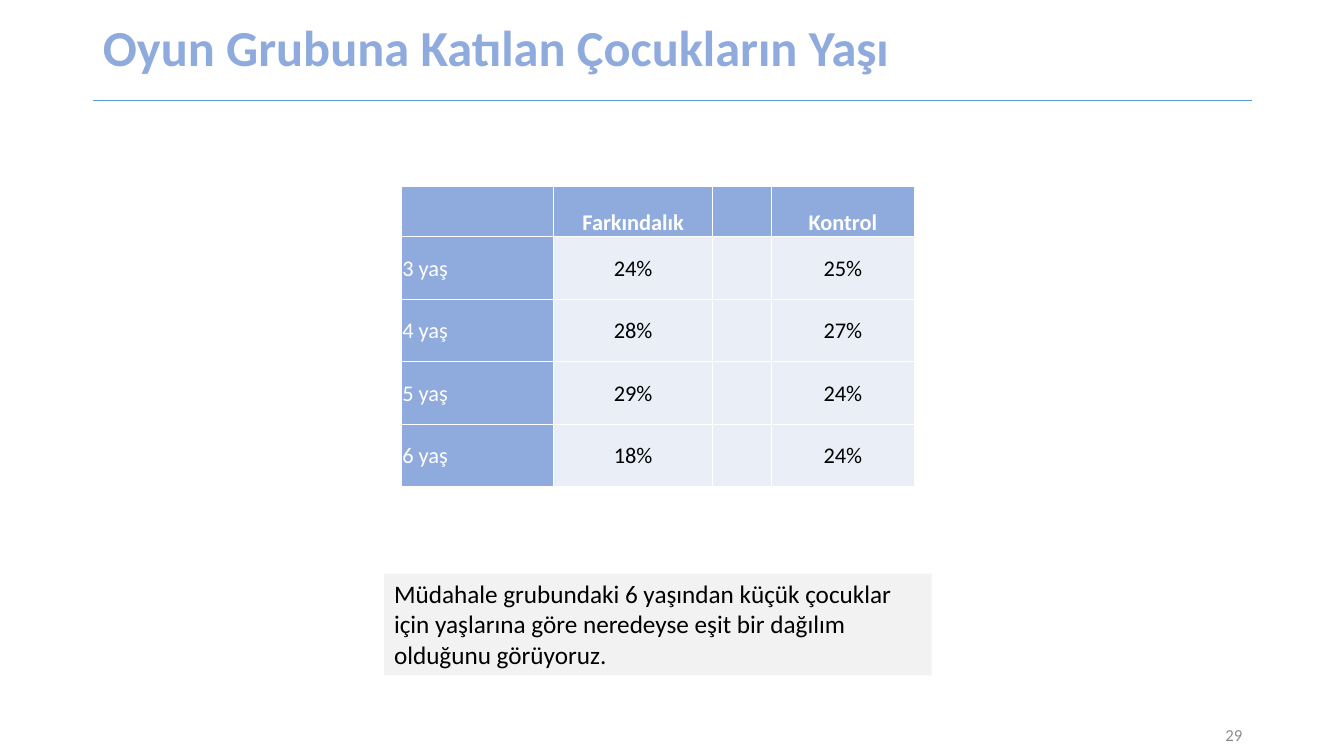
from lxml import etree
from pptx import Presentation
from pptx.dml.color import RGBColor
from pptx.enum.shapes import MSO_CONNECTOR, MSO_SHAPE
from pptx.enum.text import MSO_ANCHOR, MSO_AUTO_SIZE, PP_ALIGN
from pptx.oxml.ns import qn
from pptx.util import Inches, Pt

LEFT, CENTER, RIGHT = PP_ALIGN.LEFT, PP_ALIGN.CENTER, PP_ALIGN.RIGHT
TOP, MIDDLE, BOTTOM = MSO_ANCHOR.TOP, MSO_ANCHOR.MIDDLE, MSO_ANCHOR.BOTTOM
STRAIGHT, RECTANGLE = MSO_CONNECTOR.STRAIGHT, MSO_SHAPE.RECTANGLE
NO_FIT = MSO_AUTO_SIZE.NONE

FONT = "Calibri"
BLUE, PALE, RULE = "8FAADC", "EAEFF7", "5B9BD5"
WHITE, BLACK, GRAY, LIGHT_GRAY = "FFFFFF", "000000", "8C8C8C", "F2F2F2"

# Page grid, in inches
WIDTH, HEIGHT = 13.33, 7.5
MARGIN, CONTENT_WIDTH, TITLE_HEIGHT = 0.92, 11.5, 1
CONTENT_RIGHT = MARGIN + CONTENT_WIDTH

COLUMN_WIDTHS = [1.51, 1.58, 0.58, 1.42]
ROW_HEIGHTS = [0.5] + [0.62] * 4
AGE_ROWS = [
    ["", "Farkındalık", "", "Kontrol"],
    ["3 yaş", "24%", "", "25%"],
    ["4 yaş", "28%", "", "27%"],
    ["5 yaş", "29%", "", "24%"],
    ["6 yaş", "18%", "", "24%"],
]


def color(hex_value):
    return RGBColor.from_string(hex_value)


def inches(*lengths):
    return [Inches(length) for length in lengths]


def write(frame, text, size=16, ink=BLACK, bold=False, align=LEFT,
          anchor=MIDDLE, spacing=1.0):
    frame.word_wrap = True
    frame.vertical_anchor = anchor
    para = frame.paragraphs[0]
    para.alignment = align
    para.line_spacing = spacing
    span = para.add_run()
    span.text = text
    span.font.name = FONT
    span.font.size = Pt(size)
    span.font.bold = bold
    span.font.color.rgb = color(ink)


def add_title(page, text):
    title = page.shapes.title
    title.left, title.top, title.width, title.height = inches(
        MARGIN, 0, CONTENT_WIDTH, TITLE_HEIGHT)
    title.text_frame.auto_size = NO_FIT
    write(title.text_frame, text, size=36, ink=BLUE, bold=True, spacing=0.9)


def add_rule(page, top):
    rule = page.shapes.add_connector(
        STRAIGHT, *inches(MARGIN, top, CONTENT_RIGHT, top))
    rule.line.color.rgb = color(RULE)
    rule.line.width = Pt(0.5)
    etree.SubElement(rule._element.spPr, qn("a:effectLst"))


def add_borders(cell):
    properties = cell._tc.get_or_add_tcPr()
    for side in ("lnL", "lnR", "lnT", "lnB"):
        border = etree.SubElement(properties, qn(f"a:{side}"), w=str(Pt(1)))
        fill = etree.SubElement(border, qn("a:solidFill"))
        etree.SubElement(fill, qn("a:srgbClr"), val=WHITE)


def format_cell(cell, text, is_header, is_label):
    add_borders(cell)
    shaded = is_header or is_label
    cell.fill.solid()
    cell.fill.fore_color.rgb = color(BLUE if shaded else PALE)
    cell.margin_left = cell.margin_right = cell.margin_top = Inches(0.01)
    cell.margin_bottom = 0
    cell.vertical_anchor = BOTTOM if is_header else MIDDLE
    if text:
        write(cell.text_frame, text, ink=WHITE if shaded else BLACK,
              bold=is_header, align=LEFT if is_label else CENTER,
              anchor=cell.vertical_anchor)


def add_age_table(page, left, top):
    table = page.shapes.add_table(
        len(AGE_ROWS), len(COLUMN_WIDTHS),
        *inches(left, top, sum(COLUMN_WIDTHS), sum(ROW_HEIGHTS))).table
    for column, width in zip(table.columns, COLUMN_WIDTHS):
        column.width = Inches(width)
    for row, height in zip(table.rows, ROW_HEIGHTS):
        row.height = Inches(height)
    for row_index, texts in enumerate(AGE_ROWS):
        for column_index, text in enumerate(texts):
            format_cell(table.cell(row_index, column_index), text,
                        row_index == 0, column_index == 0)


def add_note(page, text, left, top, width, height):
    note = page.shapes.add_shape(RECTANGLE, *inches(left, top, width, height))
    note.shadow.inherit = False
    note.fill.solid()
    note.fill.fore_color.rgb = color(LIGHT_GRAY)
    note.line.fill.background()
    write(note.text_frame, text, size=18, anchor=TOP)


def add_page_number(page, number, width=3, height=0.4):
    box = page.shapes.add_textbox(
        *inches(CONTENT_RIGHT - width, 7.09, width, height))
    write(box.text_frame, number, size=12, ink=GRAY, align=RIGHT)


def main():
    deck = Presentation()
    deck.slide_width, deck.slide_height = inches(WIDTH, HEIGHT)
    page = deck.slides.add_slide(deck.slide_layouts[5])

    # Heading
    add_rule(page, TITLE_HEIGHT)
    add_title(page, "Oyun Grubuna Katılan Çocukların Yaşı")

    # Age shares and their reading
    add_age_table(page, 3.98, 1.85)
    add_page_number(page, "29")
    add_note(page, "Müdahale grubundaki 6 yaşından küçük çocuklar için "
             "yaşlarına göre neredeyse eşit bir dağılım olduğunu görüyoruz.",
             3.81, 5.69, 5.43, 1.01)

    deck.save("out.pptx")


if __name__ == "__main__":
    main()
